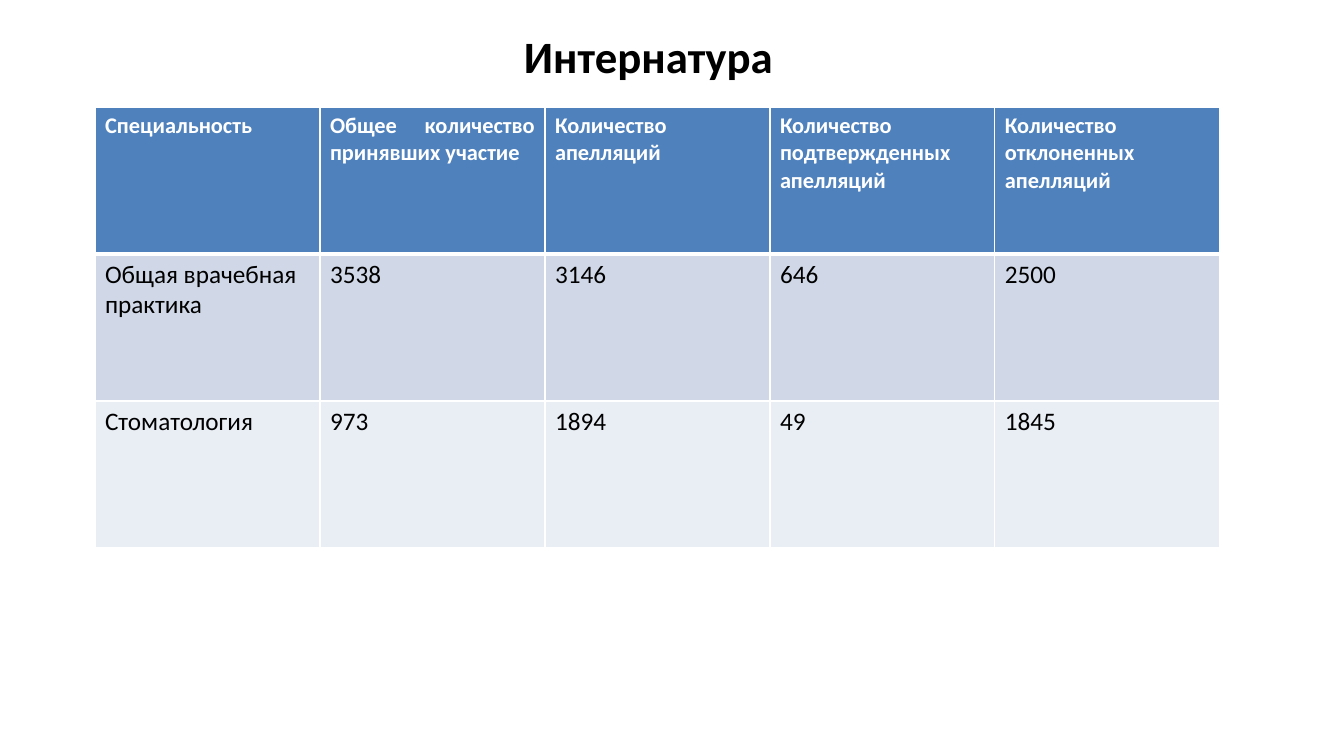
"""Build a slide with a table of internship appeal results by specialty."""
from lxml.etree import SubElement
from pptx import Presentation
from pptx.dml.color import RGBColor
from pptx.enum.text import MSO_ANCHOR, MSO_AUTO_SIZE, PP_ALIGN
from pptx.oxml.ns import qn
from pptx.util import Emu, Pt

FONT = "Calibri"
WHITE = RGBColor(0xFF, 0xFF, 0xFF)
BLACK = RGBColor(0x00, 0x00, 0x00)
HEADER_BLUE = RGBColor(0x4F, 0x81, 0xBD)
BAND_FILLS = [RGBColor(0xD0, 0xD8, 0xE8), RGBColor(0xE9, 0xED, 0xF4)]
COLUMN_WIDTH, ROW_HEIGHT = 225, 147

APPEALS = [
    ["Специальность", "Общее количество принявших участие ", "Количество апелляций",
     "Количество подтвержденных апелляций", "Количество отклоненных апелляций"],
    ["Общая врачебная практика", "3538", "3146", "646", "2500"],
    ["Стоматология", "973", "1894", "49", "1845"],
]


def px(length):
    return Emu(round(length * 914400 / 100.8))


def add_text(para, text, size, color, bold):
    span = para.add_run()
    span.text = text
    span.font.name = FONT
    span.font.size = Pt(size)
    span.font.bold = bold
    span.font.color.rgb = color


deck = Presentation()
deck.slide_width, deck.slide_height = px(1344), px(756)
page = deck.slides.add_slide(deck.slide_layouts[5])

title = page.shapes.title
title.left, title.top, title.width, title.height = px(399), px(23), px(499), px(65)
title.text_frame.auto_size = MSO_AUTO_SIZE.SHAPE_TO_FIT_TEXT
title.text_frame.vertical_anchor = MSO_ANCHOR.MIDDLE
title_para = title.text_frame.paragraphs[0]
title_para.alignment = PP_ALIGN.CENTER
add_text(title_para, "Интернатура", 32, BLACK, True)

row_count, column_count = len(APPEALS), len(APPEALS[0])
table = page.shapes.add_table(
    row_count, column_count, px(95), px(107),
    px(COLUMN_WIDTH * column_count), px(ROW_HEIGHT * row_count)).table
for column in table.columns:
    column.width = px(COLUMN_WIDTH)

for row_index, texts in enumerate(APPEALS):
    table.rows[row_index].height = px(ROW_HEIGHT)
    is_header = row_index == 0
    for column_index, text in enumerate(texts):
        cell = table.cell(row_index, column_index)
        properties = cell._tc.get_or_add_tcPr()
        for side in "LRTB":
            thick = (is_header and side == "B") or (row_index == 1 and side == "T")
            border = SubElement(properties, qn(f"a:ln{side}"), w=str(Pt(3 if thick else 1)))
            border_fill = SubElement(border, qn("a:solidFill"))
            SubElement(border_fill, qn("a:srgbClr"), val=str(WHITE))
        cell.fill.solid()
        cell.fill.fore_color.rgb = HEADER_BLUE if is_header else BAND_FILLS[row_index - 1]
        para = cell.text_frame.paragraphs[0]
        para.alignment = PP_ALIGN.JUSTIFY if is_header and column_index == 1 else PP_ALIGN.LEFT
        add_text(para, text, 16 if is_header else 18, WHITE if is_header else BLACK, is_header)

deck.save("out.pptx")
